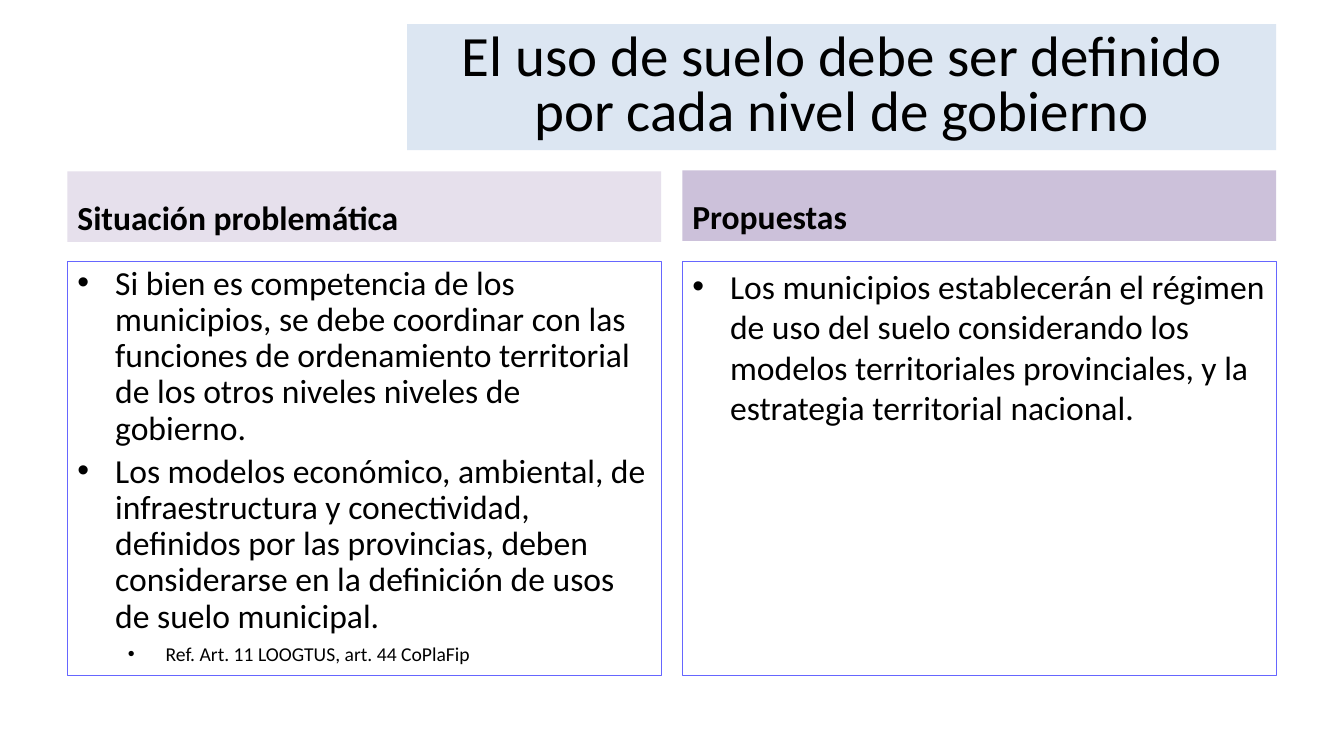
from lxml import etree
from pptx import Presentation
from pptx.dml.color import RGBColor as RGB
from pptx.enum.shapes import MSO_SHAPE as SHAPE
from pptx.enum.text import MSO_ANCHOR as ANCHOR, PP_ALIGN as ALIGN
from pptx.oxml.ns import qn
from pptx.util import Pt

BLACK = RGB(0x00, 0x00, 0x00)
TITLE_BLUE = RGB(0xDC, 0xE6, 0xF2)
PALE_LILAC = RGB(0xE6, 0xE0, 0xEC)
LILAC = RGB(0xCC, 0xC1, 0xDA)
BORDER = RGB(0x66, 0x66, 0xFF)

LEFT, COL_W, GAP = 48.2, 424.1, 15.1
RIGHT = LEFT + COL_W + GAP
HEADER_H, BODY_TOP, BODY_H = 50.4, 186.5, 295.9

TITLE = "El uso de suelo debe ser definido por cada nivel de gobierno"
PROBLEMS = [
    ("Si bien es competencia de los municipios, se debe coordinar con las "
     "funciones de ordenamiento territorial de los otros niveles niveles de "
     "gobierno.", 0, 24, 0.9),
    ("Los modelos económico, ambiental, de infraestructura y conectividad, "
     "definidos por las provincias, deben considerarse en la definición de "
     "usos de suelo municipal.", 0, 24, 0.9),
    ("Ref. Art. 11 LOOGTUS, art. 44 CoPlaFip", 1, 14, 1.0),
]
PROPOSALS = [
    ("Los municipios establecerán el régimen de uso del suelo considerando "
     "los modelos territoriales provinciales, y la estrategia territorial "
     "nacional.", 0, 24, 1.0),
]


def set_attrs(obj, values):
    for name, value in values.items():
        setattr(obj, name, value)


def add_panel(s, box, anchor, fill=None, line=None):
    sp = s.shapes.add_shape(SHAPE.RECTANGLE, *(Pt(v) for v in box))
    sp.shadow.inherit = False
    if fill is None:
        sp.fill.background()
    else:
        sp.fill.solid()
        sp.fill.fore_color.rgb = fill
    if line is None:
        sp.line.fill.background()
    else:
        sp.line.color.rgb = line
        sp.line.width = Pt(0.75)
    tf = sp.text_frame
    set_attrs(tf, {"word_wrap": True, "vertical_anchor": anchor})
    return tf


def write(p, text, size, bold=False, align=ALIGN.LEFT, spacing=1.0):
    set_attrs(p, {"alignment": align, "line_spacing": spacing})
    r = p.add_run()
    r.text = text
    set_attrs(r.font, {"name": "Calibri", "size": Pt(size), "bold": bold})
    r.font.color.rgb = BLACK


def add_bullet(p, level):
    p.level = level
    pPr = p._p.get_or_add_pPr()
    pPr.set("marL", str(Pt(27 + 36 * level)))
    pPr.set("indent", str(Pt(-27)))
    etree.SubElement(pPr, qn("a:buFont"), typeface="Arial")
    etree.SubElement(pPr, qn("a:buChar"), char="•")


def add_title(s, box):
    tf = add_panel(s, box, ANCHOR.MIDDLE, fill=TITLE_BLUE)
    write(tf.paragraphs[0], TITLE, 40.7, align=ALIGN.CENTER, spacing=0.8)


def add_header(s, box, text, fill):
    tf = add_panel(s, box, ANCHOR.BOTTOM, fill=fill)
    write(tf.paragraphs[0], text, 24, bold=True)


def add_body(s, box, items):
    tf = add_panel(s, box, ANCHOR.TOP, line=BORDER)
    for i, (text, level, size, spacing) in enumerate(items):
        p = tf.add_paragraph() if i else tf.paragraphs[0]
        add_bullet(p, level)
        if i:
            p.space_before = Pt(4.8)
        write(p, text, size, spacing=spacing)


def main():
    prs = Presentation()
    set_attrs(prs, {"slide_width": Pt(960), "slide_height": Pt(540)})
    s = prs.slides.add_slide(prs.slide_layouts[6])
    add_title(s, (290.9, 17.3, 620.6, 90))
    columns = [
        (LEFT, 122.4, "Situación problemática", PALE_LILAC, PROBLEMS),
        (RIGHT, 121.7, "Propuestas", LILAC, PROPOSALS),
    ]
    for x, top, heading, fill, items in columns:
        add_body(s, (x, BODY_TOP, COL_W, BODY_H), items)
        add_header(s, (x, top, COL_W, HEADER_H), heading, fill)
    prs.save("out.pptx")


if __name__ == "__main__":
    main()
